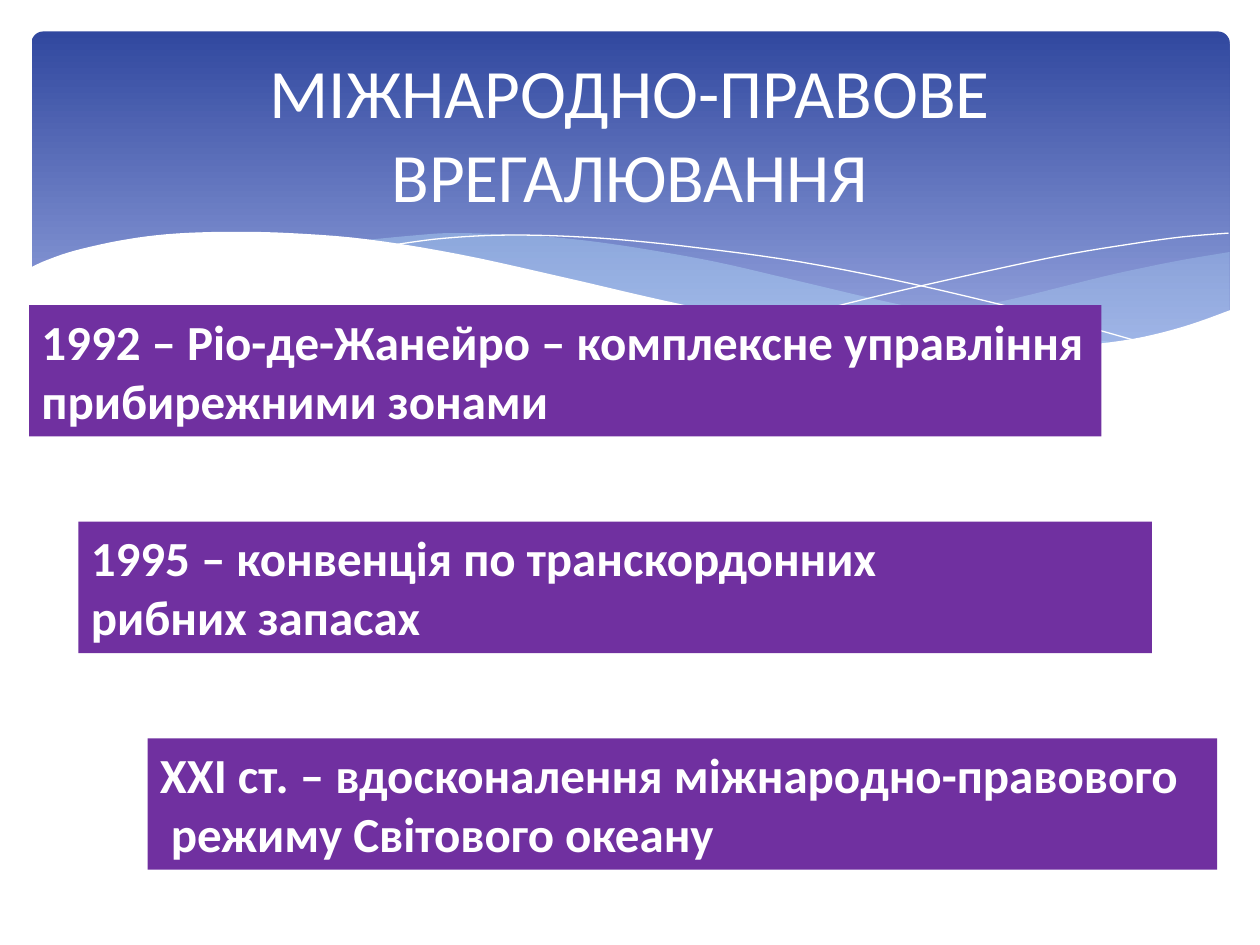
import pptx
import pptx.util
import pptx.dml.color
import pptx.enum.shapes
import pptx.enum.text
import lxml.etree
from pptx.util import Pt

RGBColor = pptx.dml.color.RGBColor
WHITE = RGBColor(0xFF, 0xFF, 0xFF)
PURPLE = RGBColor(0x70, 0x30, 0xA0)
DEEP_BLUE = RGBColor(0x31, 0x48, 0x9F)
PALE_BLUE = RGBColor(0x95, 0xA4, 0xDE)
WAVE_BLUE = RGBColor(0xB4, 0xDC, 0xFA)
A_NS = "{http://schemas.openxmlformats.org/drawingml/2006/main}"


def smooth_edge(knots, steps=5):
    """Catmull-Rom points through the knots of one edge."""
    padded = [knots[0], *knots, knots[-1]]
    points = [knots[0]]
    for p0, p1, p2, p3 in zip(padded, padded[1:], padded[2:], padded[3:]):
        for step in range(1, steps + 1):
            t = step / steps
            points.append(tuple(
                0.5 * (2 * b + (c - a) * t + (2 * a - 5 * b + 4 * c - d) * t ** 2
                       + (3 * b - a - 3 * c + d) * t ** 3)
                for a, b, c, d in zip(p0, p1, p2, p3)))
    return points


class Deck:
    font = "Calibri"

    def __init__(self, slide):
        self.slide = slide

    def add_lines(self, shape, lines, size, align, bold=False):
        frame = shape.text_frame
        for number, line in enumerate(lines):
            paragraph = frame.paragraphs[0] if number == 0 else frame.add_paragraph()
            paragraph.alignment = align
            run = paragraph.add_run()
            run.text = line
            run.font.name = self.font
            run.font.size = Pt(size)
            run.font.bold = bold
            run.font.color.rgb = WHITE

    def banner(self, left, top, width, height, corner, stops):
        kind = pptx.enum.shapes.MSO_SHAPE.ROUNDED_RECTANGLE
        shape = self.slide.shapes.add_shape(kind, Pt(left), Pt(top), Pt(width), Pt(height))
        shape.shadow.inherit = False
        shape.adjustments[0] = corner
        shape.line.fill.background()
        shape.fill.gradient()
        shape.fill.gradient_angle = 270
        for stop, (position, color) in zip(shape.fill.gradient_stops, stops):
            stop.position = position
            stop.color.rgb = color

    def wave(self, edges, fill=None, opacity=100):
        """A filled wave, or a white hairline when there is no fill."""
        points = [point for edge in edges for point in smooth_edge(edge)]
        outline = [(Pt(x), Pt(y)) for x, y in points]
        builder = self.slide.shapes.build_freeform(*outline[0])
        builder.add_line_segments(outline[1:], close=fill is not None)
        shape = builder.convert_to_shape()
        shape.shadow.inherit = False
        if fill is None:
            shape.fill.background()
            shape.line.color.rgb = WHITE
            shape.line.width = Pt(0)
            return
        shape.line.fill.background()
        shape.fill.solid()
        shape.fill.fore_color.rgb = fill
        if opacity < 100:
            color = shape.element.spPr.find(f"{A_NS}solidFill/{A_NS}srgbClr")
            lxml.etree.SubElement(color, f"{A_NS}alpha", val=str(opacity * 1000))

    def title(self, left, top, width, height, text):
        box = self.slide.shapes.add_textbox(Pt(left), Pt(top), Pt(width), Pt(height))
        box.text_frame.word_wrap = True
        box.text_frame.vertical_anchor = pptx.enum.text.MSO_ANCHOR.MIDDLE
        self.add_lines(box, [text], 39.6, pptx.enum.text.PP_ALIGN.CENTER)

    def milestone(self, left, top, width, height, lines, wrap):
        kind = pptx.enum.shapes.MSO_SHAPE.RECTANGLE
        shape = self.slide.shapes.add_shape(kind, Pt(left), Pt(top), Pt(width), Pt(height))
        shape.shadow.inherit = False
        shape.fill.solid()
        shape.fill.fore_color.rgb = PURPLE
        shape.line.fill.background()
        frame = shape.text_frame
        frame.word_wrap = wrap
        frame.auto_size = pptx.enum.text.MSO_AUTO_SIZE.SHAPE_TO_FIT_TEXT
        frame.vertical_anchor = pptx.enum.text.MSO_ANCHOR.TOP
        self.add_lines(shape, lines, 28, pptx.enum.text.PP_ALIGN.LEFT, bold=True)


# Edges of the waves, in points
RIGHT_WAVE = [
    [(702.7, 144), (673.2, 149), (641.5, 155.5), (620, 160.6), (579.6, 170.6),
     (542, 178.6), (508.3, 185), (476, 190.8)],
    [(476, 190.8), (507.6, 195.1), (536.4, 198), (578.2, 200.2), (614.9, 198.7),
     (645.8, 194.4), (673.2, 188.6), (702.7, 177.8)],
]
MIDDLE_WAVE = [
    [(643, 196.6), (602.6, 190.8), (558, 182.9), (508.3, 172.8), (452.9, 159.8),
     (409.7, 149.8), (370, 142.6), (334.8, 137.5), (302.4, 134.6), (260, 133.2),
     (236.2, 134.6), (206, 137.5)],
    [(206, 137.5), (246.2, 143.3), (290.9, 151.9), (323.3, 159.8), (381.6, 172.8),
     (432.7, 183.6), (478.8, 191.5), (519.8, 197.3), (556.6, 199.4), (589, 200.2),
     (617, 199.4), (643, 196.6)],
]
FALLING_LINE = [
    [(222.5, 140.4), (247.7, 136.8), (278.6, 134.6), (311.8, 134.6), (352, 136.8),
     (400.3, 141.8), (457.9, 149.8), (523.4, 162.7), (598.3, 180.7), (653, 195.8)],
]
RISING_LINE = [
    [(441.4, 185), (483.8, 173.5), (538.6, 160.6), (601.9, 146.9), (644.4, 139.7),
     (675.4, 135.4), (702, 133.2)],
]
WHITE_WAVE = [
    [(703.4, 177.1), (676.8, 186.5), (647.3, 193.7), (612, 198), (582.5, 199.4),
     (547.9, 198), (495.4, 193), (434.2, 182.9), (380.9, 172.1), (321.8, 158.4),
     (262.8, 145.4), (210.2, 136.8), (165.6, 133.2), (127.4, 132.5), (95, 133.9),
     (68.4, 137.5), (42.5, 143.3), (25.9, 149), (16.6, 153.4)],
    [(16.6, 236.9), (703.4, 236.9)],
]

# Left, width, wrapping and lines of each milestone
MILESTONES = [
    (16.6, 612.7, False, ["1992 – Ріо-де-Жанейро – комплексне управління",
                          "прибирежними зонами"]),
    (44.8, 613.4, True, ["1995 – конвенція по транскордонних",
                         "рибних запасах"]),
    (84.3, 611.3, False, ["ХХІ ст. – вдосконалення міжнародно-правового",
                          " режиму Світового океану"]),
]


def main():
    presentation = pptx.Presentation()
    presentation.slide_width = Pt(720)
    presentation.slide_height = Pt(540)
    deck = Deck(presentation.slides.add_slide(presentation.slide_layouts[6]))

    # Header with waves
    deck.banner(18, 18, 684.7, 194.4, 0.034, [(0, DEEP_BLUE), (0.9, PALE_BLUE)])
    deck.wave(RIGHT_WAVE, WAVE_BLUE, 29)
    deck.wave(MIDDLE_WAVE, WAVE_BLUE, 40)
    deck.wave(FALLING_LINE)
    deck.wave(RISING_LINE)
    deck.wave(WHITE_WAVE, WHITE)
    deck.title(36, 26.6, 648, 98.6, "МІЖНАРОДНО-ПРАВОВЕ ВРЕГАЛЮВАННЯ")

    # Milestones, evenly stepped down the slide
    for row, (left, width, wrap, lines) in enumerate(MILESTONES):
        deck.milestone(left, 174.3 + row * 123.8, width, 75.1, lines, wrap)

    presentation.save("out.pptx")


if __name__ == "__main__":
    main()
